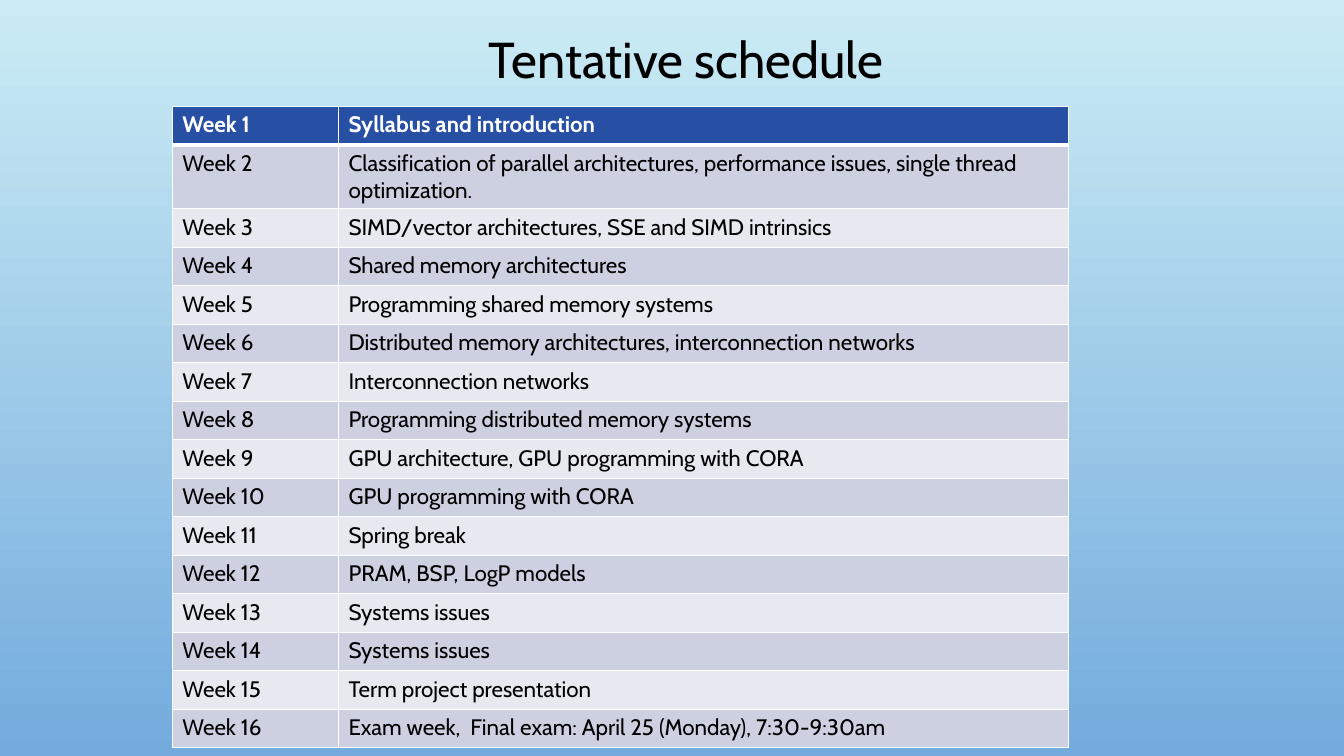
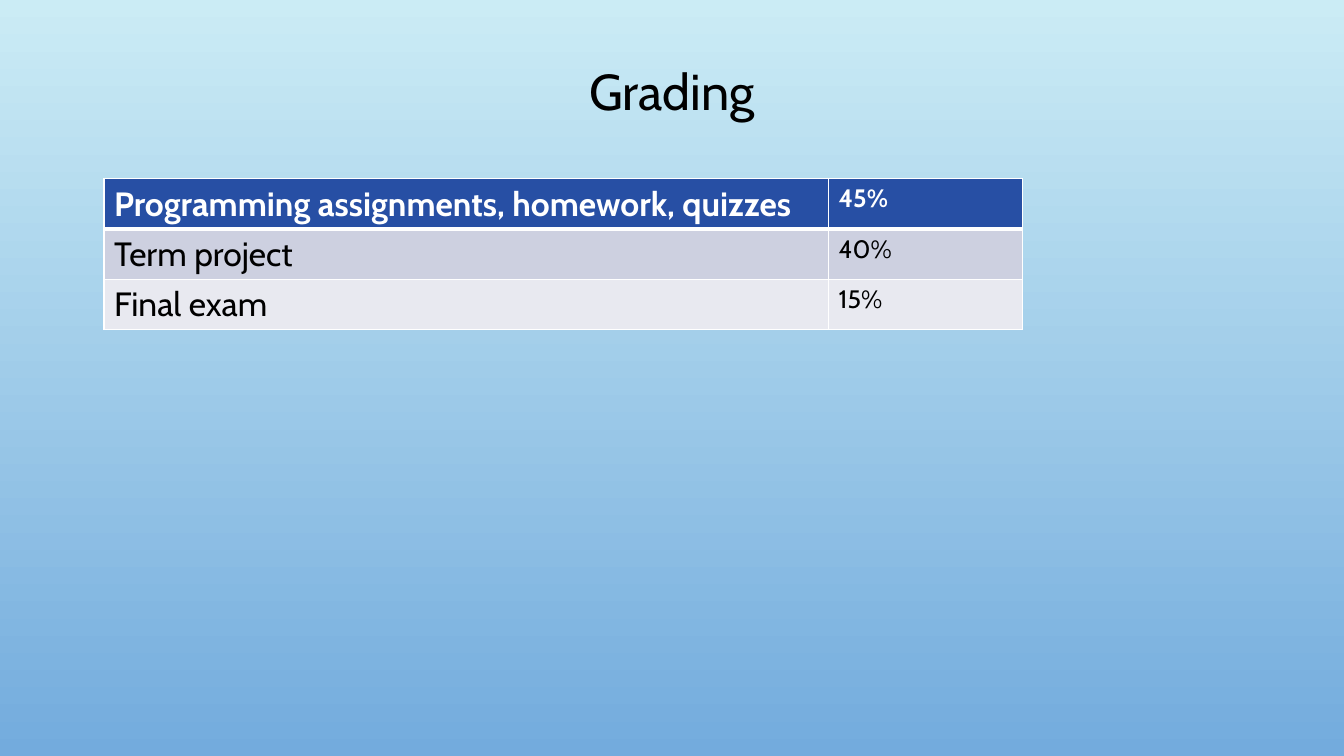
from lxml.etree import SubElement
from pptx import Presentation
from pptx.dml.color import RGBColor
from pptx.enum.text import MSO_ANCHOR as Anchor, PP_ALIGN as Align
from pptx.oxml.ns import qn
from pptx.util import Cm, Pt

FONT = "Cabin"
BLACK = RGBColor(0x00, 0x00, 0x00)
WHITE = RGBColor(0xFF, 0xFF, 0xFF)
NAVY = RGBColor(0x27, 0x4F, 0xA4)
BANDS = (RGBColor(0xE8, 0xE9, 0xF0), RGBColor(0xCD, 0xD0, 0xE0))
SKY = (RGBColor(0xCB, 0xEC, 0xF5), RGBColor(0x73, 0xAB, 0xDD))

TOPICS = (
    "Syllabus and introduction",
    "Classification of parallel architectures, performance issues, "
    "single thread optimization.",
    "SIMD/vector architectures, SSE and SIMD intrinsics",
    "Shared memory architectures",
    "Programming shared memory systems",
    "Distributed memory architectures, interconnection networks",
    "Interconnection networks",
    "Programming distributed memory systems",
    "GPU architecture, GPU programming with CORA",
    "GPU programming with CORA",
    "Spring break",
    "PRAM, BSP, LogP models",
    "Systems issues",
    "Systems issues",
    "Term project presentation",
    "Exam week,  Final exam: April 25 (Monday), 7:30-9:30am",
)
GRADES = (
    ("Programming assignments, homework, quizzes", "45%"),
    ("Term project", "40%"),
    ("Final exam", "15%"),
)


def write(frame, text, size, color=BLACK, bold=False, align=Align.LEFT,
          spacing=1.0):
    para = frame.paragraphs[0]
    para.alignment = align
    para.line_spacing = spacing
    run = para.add_run()
    run.text = text
    font = run.font
    font.name, font.size, font.bold = FONT, Pt(size), bold
    font.color.rgb = color


def paint_sky(master):
    fill = master.background.fill
    fill.gradient()
    fill.gradient_angle = 270
    for stop, color in zip(fill.gradient_stops, SKY):
        stop.color.rgb = color


def add_slide(deck, title, left, top):
    slide = deck.slides.add_slide(deck.slide_layouts[6])
    box = slide.shapes.add_textbox(Cm(left), Cm(top), Cm(28.78), Cm(3.12))
    frame = box.text_frame
    frame.word_wrap = True
    frame.vertical_anchor = Anchor.MIDDLE
    write(frame, title, 36, align=Align.CENTER, spacing=0.9)
    return slide


def edge(cell, top, bottom):
    """Draw white borders; top and bottom are widths in points."""
    props = cell._tc.get_or_add_tcPr()
    for side, width in (("L", 1), ("R", 1), ("T", top), ("B", bottom)):
        line = SubElement(props, qn(f"a:ln{side}"), w=str(Pt(width)))
        fill = SubElement(line, qn("a:solidFill"))
        SubElement(fill, qn("a:srgbClr"), val=str(WHITE))


def add_grid(slide, rows, left, top, widths, height, sizes):
    """Add a table; widths, height in cm and a text size per column."""
    grid = slide.shapes.add_table(
        len(rows), len(widths), Cm(left), Cm(top),
        Cm(sum(widths)), Cm(height * len(rows))).table
    grid.horz_banding = False
    for col, width in zip(grid.columns, widths):
        col.width = Cm(width)
    for i, row in enumerate(rows):
        head = i == 0
        grid.rows[i].height = Cm(height)
        for j, text in enumerate(row):
            cell = grid.cell(i, j)
            edge(cell, top=3 if i == 1 else 1, bottom=3 if head else 1)
            cell.fill.solid()
            cell.fill.fore_color.rgb = NAVY if head else BANDS[i % 2]
            write(cell.text_frame, text, sizes[j],
                  color=WHITE if head else BLACK, bold=head)


def main():
    deck = Presentation()
    deck.slide_width, deck.slide_height = Cm(33.87), Cm(19.05)
    paint_sky(deck.slide_master)

    plan = add_slide(deck, "Tentative schedule", 2.9, 0)
    weeks = [(f"Week {n}", topic) for n, topic in enumerate(TOPICS, 1)]
    add_grid(plan, weeks, 4.34, 2.68, (4.19, 18.39), 0.97, (16, 16))

    marks = add_slide(deck, "Grading", 2.54, 0.81)
    add_grid(marks, GRADES, 2.62, 4.5, (18.26, 4.88), 1.27, (24, 18))

    deck.save("out.pptx")


if __name__ == "__main__":
    main()
